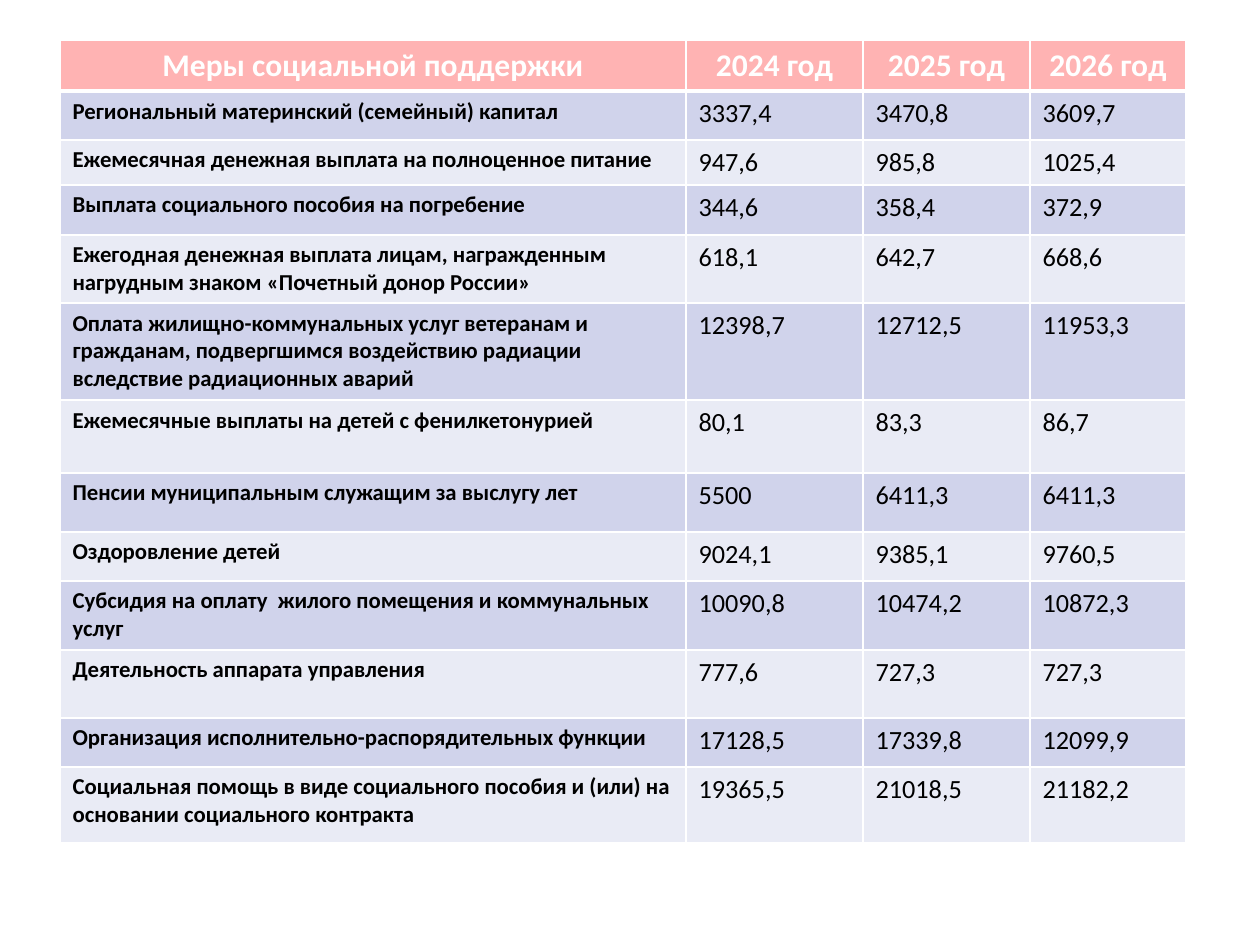
"""Build a slide with a table of social support measures by year."""
from lxml import etree
from pptx import Presentation
from pptx import util as u
from pptx.dml import color
from pptx.enum import text
from pptx.oxml import ns

SCALE = 914400 / 126
FONT = "Calibri"
WHITE, BLACK = "FFFFFF", "000000"
HEADER_FILL = "FFB3B3"
BAND_FILLS = ("D0D3EB", "E9EBF5")
COLUMN_WIDTHS = (626, 177, 167, 156)
HEADER_HEIGHT = 51
HEADER = ("Меры социальной поддержки", "2024 год", "2025 год", "2026 год")
MEASURES = (
    (49, "Региональный материнский (семейный) капитал", "3337,4", "3470,8", "3609,7"),
    (45, "Ежемесячная денежная выплата на полноценное питание", "947,6", "985,8", "1025,4"),
    (50, "Выплата социального пособия на погребение", "344,6", "358,4", "372,9"),
    (68, "Ежегодная денежная выплата лицам, награжденным нагрудным знаком "
         "«Почетный донор России»", "618,1", "642,7", "668,6"),
    (97, "Оплата жилищно-коммунальных услуг ветеранам и гражданам, подвергшимся "
         "воздействию радиации вследствие радиационных аварий", "12398,7", "12712,5", "11953,3"),
    (73, "Ежемесячные выплаты на детей с фенилкетонурией", "80,1", "83,3", "86,7"),
    (59, "Пенсии муниципальным служащим за выслугу лет", "5500", "6411,3", "6411,3"),
    (49, "Оздоровление детей", "9024,1", "9385,1", "9760,5"),
    (69, "Субсидия на оплату  жилого помещения и коммунальных услуг",
     "10090,8", "10474,2", "10872,3"),
    (68, "Деятельность аппарата управления", "777,6", "727,3", "727,3"),
    (49, "Организация исполнительно-распорядительных функции", "17128,5", "17339,8", "12099,9"),
    (76, "Социальная помощь в виде социального пособия и (или) на основании "
         "социального контракта", "19365,5", "21018,5", "21182,2"),
)
HEADER_FORMAT = {"size": u.Pt(18), "bold": True}
NAME_FORMAT = {"size": u.Pt(13), "bold": True}
VALUE_FORMAT = {"size": u.Pt(15), "bold": False}


def px(length):
    """Turn a length in px into EMU."""
    return u.Emu(round(length * SCALE))


def rgb(value):
    """Turn a hex string into a colour."""
    return color.RGBColor.from_string(value)


def set_borders(cell, bottom):
    """Draw white borders around a cell, with the given bottom width in points."""
    properties = cell._tc.get_or_add_tcPr()
    for side, points in (("L", 1), ("R", 1), ("T", 1), ("B", bottom)):
        line = etree.SubElement(properties, ns.qn(f"a:ln{side}"), w=str(u.Pt(points)))
        fill = etree.SubElement(line, ns.qn("a:solidFill"))
        etree.SubElement(fill, ns.qn("a:srgbClr"), val=WHITE)


def fill_cell(cell, words, fill, ink, formats, align=text.PP_ALIGN.LEFT, bottom=1):
    """Write and style one table cell."""
    set_borders(cell, bottom)
    cell.fill.solid()
    cell.fill.fore_color.rgb = rgb(fill)
    para = cell.text_frame.paragraphs[0]
    para.alignment = align
    span = para.add_run()
    span.text = words
    span.font.color.rgb = rgb(ink)
    for name, value in {"name": FONT, **formats}.items():
        setattr(span.font, name, value)


def add_grid(page, left, top):
    """Add an empty table with the planned column widths and row heights."""
    heights = [HEADER_HEIGHT] + [measure[0] for measure in MEASURES]
    frame = page.shapes.add_table(
        len(heights), len(COLUMN_WIDTHS), px(left), px(top),
        px(sum(COLUMN_WIDTHS)), px(sum(heights)))
    table = frame.table
    table.first_row = table.horz_banding = False
    for column, width in zip(table.columns, COLUMN_WIDTHS):
        column.width = px(width)
    for row, height in zip(table.rows, heights):
        row.height = px(height)
    return table


def fill_header(table):
    """Write the header row."""
    for cell, words in zip(table.rows[0].cells, HEADER):
        fill_cell(cell, words, HEADER_FILL, WHITE, HEADER_FORMAT,
                  align=text.PP_ALIGN.CENTER, bottom=3)


def fill_measures(table):
    """Write the banded rows of measures and yearly sums."""
    for index, (_, *entries) in enumerate(MEASURES):
        fill = BAND_FILLS[index % 2]
        for column, words in enumerate(entries):
            formats = VALUE_FORMAT if column else NAME_FORMAT
            fill_cell(table.cell(index + 1, column), words, fill, BLACK, formats)


def main():
    """Build and save the deck."""
    deck = Presentation()
    deck.slide_width, deck.slide_height = px(1260), px(945)
    page = deck.slides.add_slide(deck.slide_layouts[6])
    table = add_grid(page, 60, 40)
    fill_header(table)
    fill_measures(table)
    deck.save("out.pptx")


if __name__ == "__main__":
    main()
